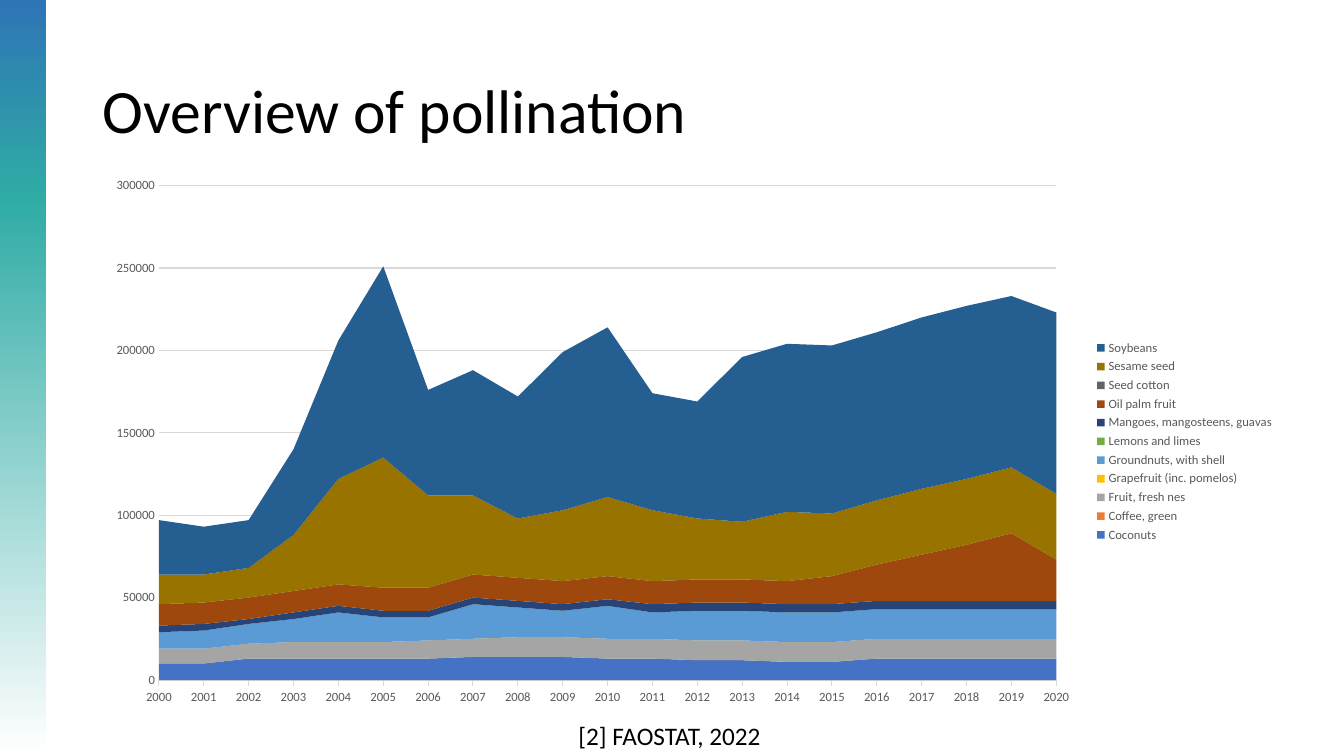
from lxml import etree
from pptx import Presentation
from pptx.chart.data import CategoryChartData
from pptx.dml.color import RGBColor
from pptx.enum.chart import XL_CHART_TYPE, XL_LEGEND_POSITION, XL_TICK_MARK
from pptx.enum.shapes import MSO_SHAPE
from pptx.enum.text import MSO_ANCHOR, MSO_AUTO_SIZE
from pptx.oxml import parse_xml
from pptx.oxml.ns import nsdecls, qn
from pptx.util import Inches, Pt

AREA_STACKED = XL_CHART_TYPE.AREA_STACKED
LEGEND_RIGHT = XL_LEGEND_POSITION.RIGHT
TICK_NONE, TICK_OUTSIDE = XL_TICK_MARK.NONE, XL_TICK_MARK.OUTSIDE
RECTANGLE = MSO_SHAPE.RECTANGLE
TOP, MIDDLE = MSO_ANCHOR.TOP, MSO_ANCHOR.MIDDLE
FIT_NONE, FIT_SHAPE = MSO_AUTO_SIZE.NONE, MSO_AUTO_SIZE.SHAPE_TO_FIT_TEXT

COLORS = {
    "text": "000000", "label": "595959", "grid": "D9D9D9",
    "white": "FFFFFF", "teal": "2FABA5", "blue": "2E75B6",
}
YEARS = [str(year) for year in range(2000, 2021)]
NONE_GROWN = [0] * len(YEARS)
CROPS = [
    ("Coconuts", "4472C4",
     [10, 10, 13, 13, 13, 13, 13, 14, 14, 14, 13, 13, 12, 12, 11, 11, 13, 13, 13, 13, 13]),
    ("Coffee, green", "ED7D31", NONE_GROWN),
    ("Fruit, fresh nes", "A5A5A5",
     [9, 9, 9, 10, 10, 10, 11, 11] + [12] * 13),
    ("Grapefruit (inc. pomelos)", "FFC000", NONE_GROWN),
    ("Groundnuts, with shell", "5B9BD5",
     [10, 11, 12, 14, 18, 15, 14, 21, 18, 16, 20, 16] + [18] * 9),
    ("Lemons and limes", "70AD47", NONE_GROWN),
    ("Mangoes, mangosteens, guavas", "264478",
     [4, 4, 3] + [4] * 8 + [5] * 10),
    ("Oil palm fruit", "9E480E",
     [13] * 5 + [14] * 10 + [17, 22, 28, 34, 41, 25]),
    ("Seed cotton", "636363", NONE_GROWN),
    ("Sesame seed", "997300",
     [18, 17, 18, 34, 64, 79, 56, 48, 36, 43, 48, 43, 37, 35, 42, 38, 39, 40, 40, 40, 40]),
    ("Soybeans", "255E91",
     [33, 29, 29, 52, 84, 116, 64, 76, 74, 96, 103, 71, 71, 100, 102, 102, 102, 104, 105,
      104, 110]),
]


def apply_format(target, values):
    for name, value in values.items():
        setattr(target, name, value)


class SlideBuilder:
    font_name = "Calibri"

    def __init__(self, presentation):
        self.column = presentation.slide_width / 100
        self.row = presentation.slide_height / 100
        self.slide = presentation.slides.add_slide(presentation.slide_layouts[6])

    def box(self, left, top, width, height):
        return (round(left * self.column), round(top * self.row),
                round(width * self.column), round(height * self.row))

    def style_font(self, font, size, color):
        apply_format(font, {"name": self.font_name, "size": Pt(size)})
        font.color.rgb = RGBColor.from_string(COLORS[color])

    def style_line(self, line, color):
        line.width = Pt(0.75)
        line.color.rgb = RGBColor.from_string(COLORS[color])

    def text(self, place, wording, size, anchor=TOP, fit=FIT_NONE, spacing=1.0):
        frame = self.slide.shapes.add_textbox(*self.box(*place)).text_frame
        apply_format(frame, {"word_wrap": True, "auto_size": fit, "vertical_anchor": anchor})
        paragraph = frame.paragraphs[0]
        paragraph.line_spacing = spacing
        run = paragraph.add_run()
        run.text = wording
        self.style_font(run.font, size, "text")

    def gradient_band(self, place, stops):
        shape = self.slide.shapes.add_shape(RECTANGLE, *self.box(*place))
        shape.rotation = 180
        shape.shadow.inherit = False
        shape.line.fill.background()
        gradient = parse_xml(f'<a:gradFill {nsdecls("a")} rotWithShape="1"><a:gsLst/>'
                             '<a:lin ang="5400000" scaled="0"/></a:gradFill>')
        for position, color in stops:
            stop = etree.SubElement(gradient[0], qn("a:gs"), pos=str(position * 1000))
            etree.SubElement(stop, qn("a:srgbClr"), val=COLORS[color])
        shape.element.spPr.find(qn("a:prstGeom")).addnext(gradient)

    def area_chart(self, place, categories, series_rows):
        data = CategoryChartData(number_format="General")
        data.categories = categories
        for name, _, thousands in series_rows:
            data.add_series(name, [value * 1000 for value in thousands])
        chart = self.slide.shapes.add_chart(AREA_STACKED, *self.box(*place), data).chart
        apply_format(chart, {"has_title": False, "has_legend": True})
        self.style_font(chart.font, 10, "text")
        apply_format(chart.legend, {"position": LEGEND_RIGHT, "include_in_layout": False})
        self.style_font(chart.legend.font, 9, "label")
        chart.plots[0].vary_by_categories = False
        for series, (_, color, _) in zip(chart.plots[0].series, series_rows):
            series.format.fill.solid()
            series.format.fill.fore_color.rgb = RGBColor.from_string(color)
            series.format.line.fill.background()
        self.axis(chart.category_axis, TICK_OUTSIDE, False)
        self.axis(chart.value_axis, TICK_NONE, True)
        self.style_line(chart.category_axis.format.line, "grid")
        self.style_line(chart.value_axis.major_gridlines.format.line, "grid")
        chart.value_axis.format.line.fill.background()
        apply_format(chart.value_axis, {"minimum_scale": 0, "maximum_scale": 300000,
                                        "major_unit": 50000})

    def axis(self, axis, tick, gridlines):
        apply_format(axis, {"major_tick_mark": tick, "minor_tick_mark": TICK_NONE,
                            "has_major_gridlines": gridlines})
        self.style_font(axis.tick_labels.font, 9, "label")


def main():
    presentation = Presentation()
    presentation.slide_width = Inches(13.33)
    presentation.slide_height = Inches(7.5)
    builder = SlideBuilder(presentation)
    builder.text((6.9, 5.33, 86.25, 19.33), "Overview of pollination", 44,
                 anchor=MIDDLE, spacing=0.9)
    builder.gradient_band((0, 0, 3.45, 100), [(0, "white"), (74, "teal"), (100, "blue")])
    builder.area_chart((6.9, 22.13, 88.65, 72.53), YEARS, CROPS)
    builder.text((42.3, 94.67, 15.4, 5.33), "[2] FAOSTAT, 2022", 18, fit=FIT_SHAPE)
    presentation.save("out.pptx")


if __name__ == "__main__":
    main()
